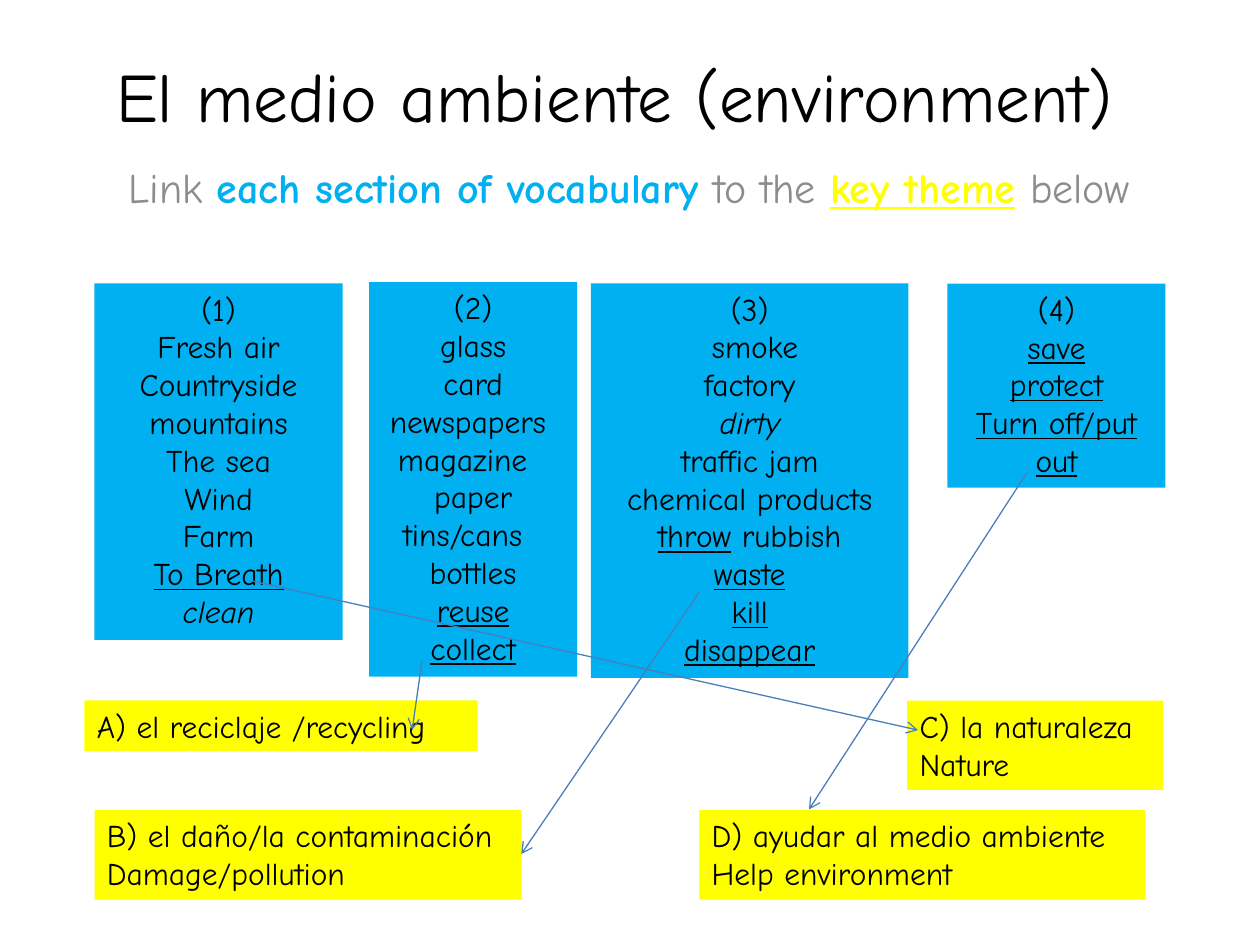
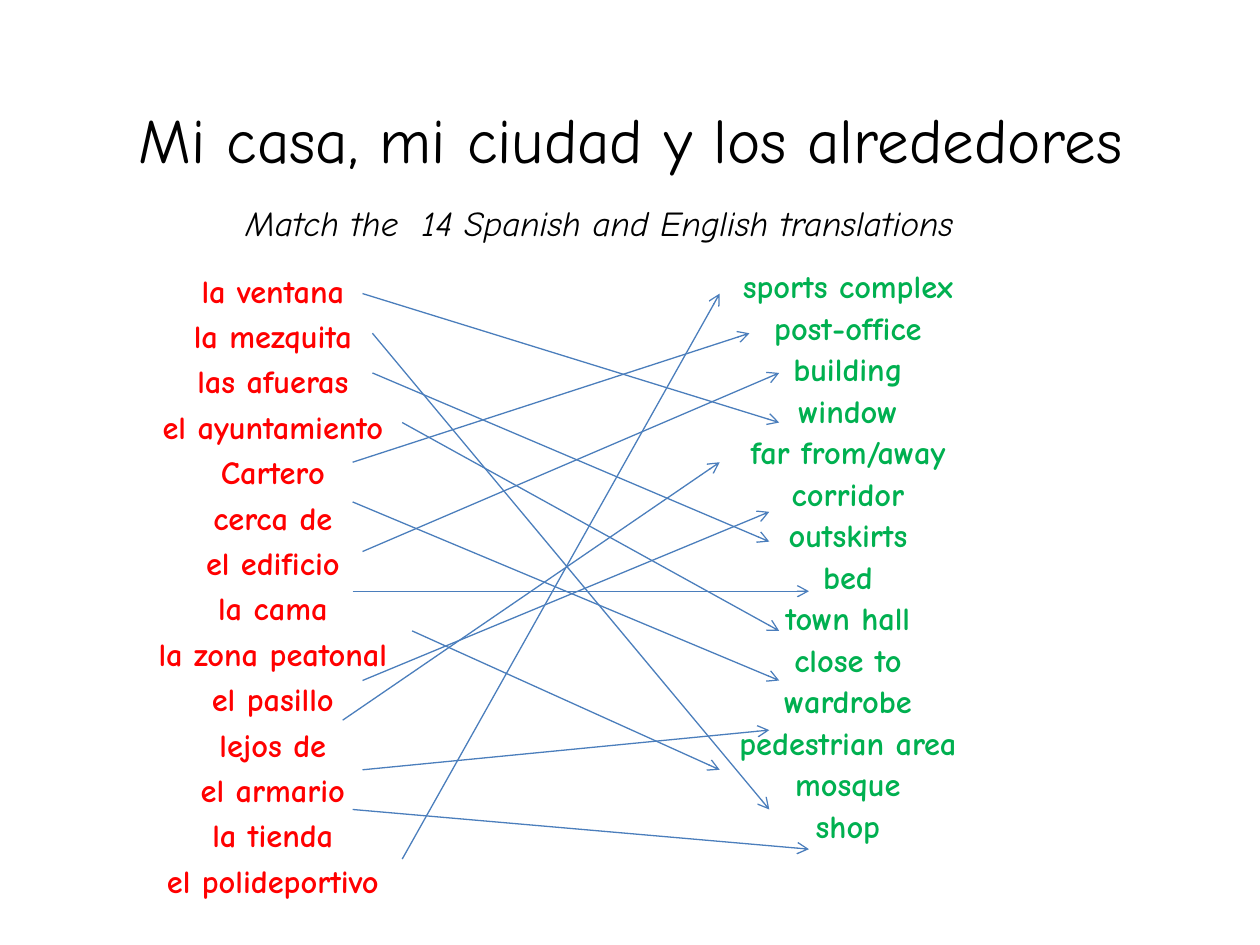
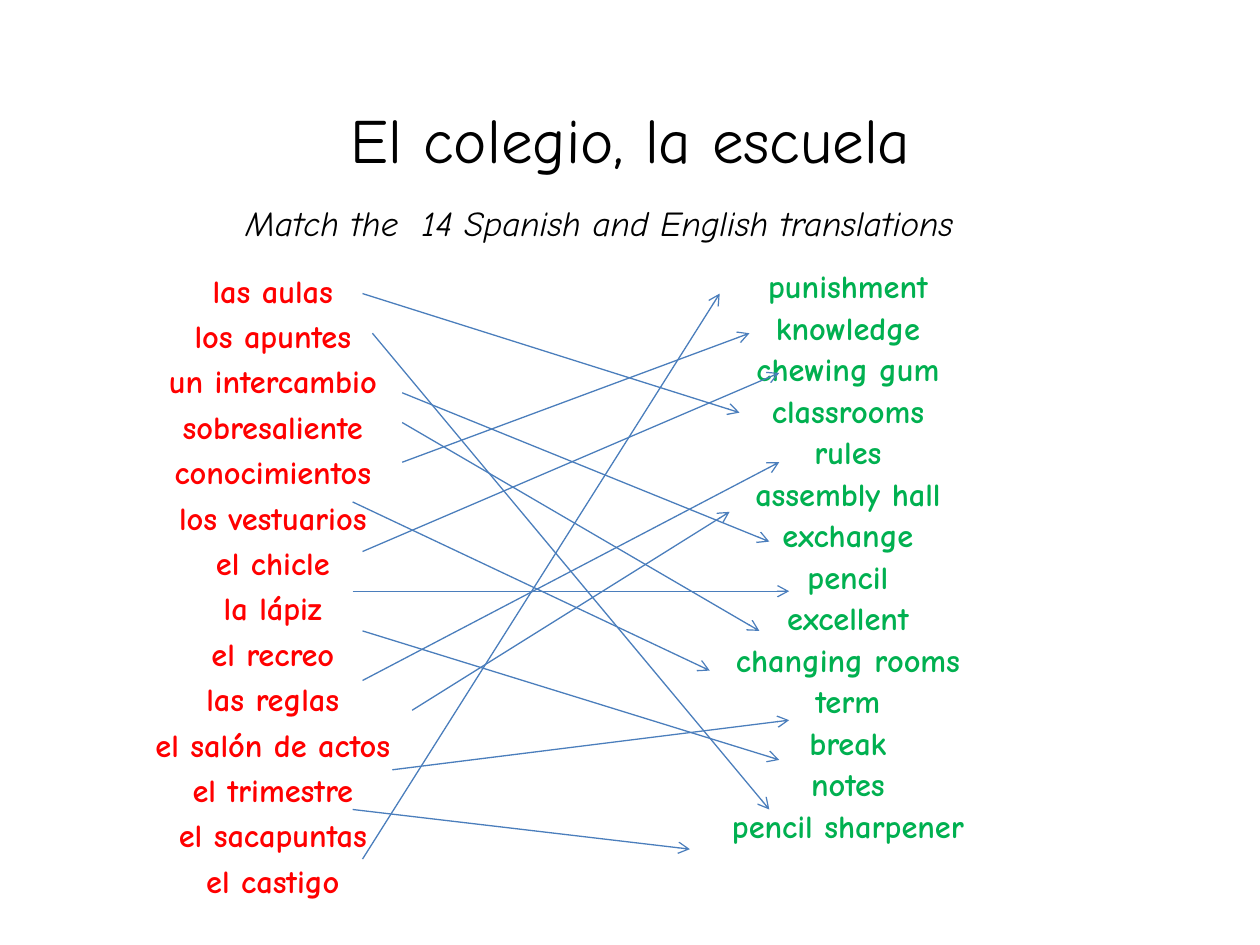
"""Build three Spanish vocabulary matching slides."""
from lxml import etree
from pptx import Presentation, util as u
from pptx.dml.color import RGBColor
from pptx.enum import shapes, text
from pptx.oxml.ns import qn

FONT = "Comic Neue"
BLACK, GREY, BLUE, YELLOW = "000000", "8C8C8C", "00B0F0", "FFFF00"
RED, GREEN, ARROW = "FF0000", "00B050", "4B7EBC"
WIDTH, HEIGHT = u.Inches(10), u.Inches(7.5)
COLUMN, ROW = WIDTH / 100, HEIGHT / 75
TICK = u.Mm(2)
ARROW_ORIGIN = (27.2, 23.3)
CENTER, LEFT = text.PP_ALIGN.CENTER, text.PP_ALIGN.LEFT
UNDERLINED, ITALIC = {"underline": True}, {"italic": True}

GROUPS = [
    ((7.5, 22.5, 19.7, 28.3), [
        "(1)", "Fresh air", "Countryside", "mountains", "The sea", "Wind", "Farm",
        [("To Breath", UNDERLINED)], [("clean", ITALIC)]]),
    ((29.3, 22.4, 16.5, 31.3), [
        "(2)", "glass", "card", "newspapers  magazine  ", "paper", "tins/cans  ", "bottles",
        [("reuse", UNDERLINED)], [("collect", UNDERLINED)]]),
    ((46.9, 22.5, 25.2, 31.3), [
        "(3)", " smoke", "factory", [("dirty", ITALIC)], "traffic jam", "chemical products",
        [("throw", UNDERLINED), (" rubbish", {})], [("waste", UNDERLINED)],
        [("kill", UNDERLINED)], [("disappear", UNDERLINED)]]),
    ((75.2, 22.5, 17.3, 16.2), [
        "(4)", [("save", UNDERLINED)], [("protect", UNDERLINED)],
        [("Turn off/put out", UNDERLINED)]]),
]
THEMES = [
    ((6.7, 55.6, 31.2, 4), ["A) el reciclaje /recycling"]),
    ((72, 55.6, 20.3, 7.1), ["C) la naturaleza", "Nature"]),
    ((7.5, 64.3, 33.9, 7.1), ["B) el daño/la contaminación", "Damage/pollution"]),
    ((55.5, 64.3, 35.4, 7.1), ["D) ayudar al medio ambiente", "Help environment"]),
]
THEME_ARROWS = [(-9, 29, 58, 44), (8, 37, 7, 44), (36, 30, 18, 56.5), (69, 18, 47, 52)]

TOWN = (
    "Mi casa, mi ciudad y los alrededores",
    ["la ventana", "la mezquita", "las afueras", "el ayuntamiento", "Cartero", "cerca de",
     "el edificio", "la cama", "la zona peatonal", "el pasillo", "lejos de", "el armario",
     "la tienda", "el polideportivo"],
    ["sports complex", "post-office", "building", "window", "far from/away", "corridor",
     "outskirts", "bed", "town hall", "close to", "wardrobe", "pedestrian area", "mosque",
     "shop"],
    [(2, 0, 44, 13), (3, 4, 43, 52), (3, 8, 43, 25), (6, 13, 44, 34), (1, 17, 41, 4),
     (1, 21, 44, 39), (2, 26, 44, 8), (1, 30, 47, 30), (7, 34, 38, 48), (2, 39, 43, 22),
     (0, 43, 38, 17), (2, 48, 43, 44), (1, 52, 47, 56), (6, 57, 38, 0)],
)
SCHOOL = (
    "El colegio, la escuela",
    ["las aulas", "los apuntes", "un intercambio", "sobresaliente", "conocimientos",
     "los vestuarios", "el chicle", "la lápiz", "el recreo", "las reglas",
     "el salón de actos", "el trimestre", "el sacapuntas", "el castigo"],
    ["punishment", "knowledge", "chewing gum", "classrooms", "rules", "assembly hall",
     "exchange", "pencil", "excellent", "changing rooms", "term", "break", "notes",
     "pencil sharpener"],
    [(2, 0, 40, 12), (3, 4, 43, 52), (6, 10, 43, 25), (6, 13, 42, 34), (6, 17, 41, 4),
     (1, 21, 37, 38), (2, 26, 44, 8), (1, 30, 45, 30), (2, 34, 44, 47), (7, 42, 39, 22),
     (2, 39, 44, 17), (5, 48, 45, 43), (1, 52, 35, 56), (2, 57, 38, 0)],
)


def color(value):
    """Turn a hex string into a colour."""
    return RGBColor.from_string(value)


def place(box):
    """Turn grid columns and rows into slide lengths."""
    left, top, width, height = box
    return [round(n) for n in (left * COLUMN, top * ROW, width * COLUMN, height * ROW)]


def write(shape, paragraphs, size, ink=BLACK, align=CENTER, bold=False, italic=False,
          before=0, spacing=1.0):
    """Write paragraphs, each a string or a list of spans with their own style."""
    frame = shape.text_frame
    frame.word_wrap = True
    for index, content in enumerate(paragraphs):
        para = frame.add_paragraph() if index else frame.paragraphs[0]
        para.alignment, para.line_spacing = align, spacing
        para.space_before = u.Pt(before)
        para.font.name, para.font.size = FONT, u.Pt(size)
        para.font.bold, para.font.italic = bold, italic
        para.font.color.rgb = color(ink)
        for words, style in [(content, {})] if isinstance(content, str) else content:
            span = para.add_run()
            span.text = words
            for name, value in style.items():
                if name == "ink":
                    span.font.color.rgb = color(value)
                else:
                    setattr(span.font, name, value)


def add_text(page, box, paragraphs, size, anchor=text.MSO_ANCHOR.TOP, **style):
    """Add a text box."""
    shape = page.shapes.add_textbox(*place(box))
    shape.text_frame.vertical_anchor = anchor
    write(shape, paragraphs, size, **style)


def add_card(page, box, paragraphs, fill, align):
    """Add a filled vocabulary card."""
    card = page.shapes.add_shape(shapes.MSO_SHAPE.RECTANGLE, *place(box))
    card.shadow.inherit = False
    card.fill.solid()
    card.fill.fore_color.rgb = color(fill)
    card.line.fill.background()
    card.text_frame.vertical_anchor = text.MSO_ANCHOR.TOP
    write(card, paragraphs, 18, align=align)


def add_arrows(page, arrows):
    """Draw arrows given in ticks from the arrow origin."""
    left, top = ARROW_ORIGIN[0] * COLUMN, ARROW_ORIGIN[1] * ROW
    for x1, y1, x2, y2 in arrows:
        ends = (left + x1 * TICK, top + y1 * TICK, left + x2 * TICK, top + y2 * TICK)
        arrow = page.shapes.add_connector(shapes.MSO_CONNECTOR.STRAIGHT, *map(round, ends))
        arrow.line.color.rgb = color(ARROW)
        arrow.line.width = u.Pt(0.75)
        etree.SubElement(arrow.line._get_or_add_ln(), qn("a:tailEnd"), type="arrow")
        etree.SubElement(arrow._element.spPr, qn("a:effectLst"))


def add_title(page, box, title, size):
    """Add a vertically centred title."""
    add_text(page, box, [title], size, anchor=text.MSO_ANCHOR.MIDDLE)


def build_themes(page):
    """Lay out word groups, key themes and the arrows joining them."""
    add_title(page, (3.5, 3.6, 90.5, 7.9), "El medio ambiente (environment)", 39.6)
    instruction = [
        ("Link ", {}), ("each section of vocabulary ", {"ink": BLUE, "bold": True}),
        ("to the ", {}), ("key theme", {"ink": YELLOW, "bold": True, "underline": True}),
        (" ", {"bold": True}), ("below", {})]
    add_text(page, (3.5, 12.3, 92.9, 7.1), [instruction], 24, ink=GREY, before=4.8)
    for box, words in GROUPS:
        add_card(page, box, words, BLUE, CENTER)
    for box, words in THEMES:
        add_card(page, box, words, YELLOW, LEFT)
    add_arrows(page, THEME_ARROWS)


def build_match(page, title, spanish, english, arrows):
    """Lay out two word lists and the arrows joining translations."""
    add_title(page, (2.8, 2.9, 94.5, 16.1), title, 36)
    add_text(page, (6.7, 21, 29.9, 49.6), spanish, 18.5, ink=RED, bold=True, before=3.7)
    add_text(page, (18.5, 15.5, 66.9, 4.4),
             ["Match the  14 Spanish and English translations"], 20, align=LEFT, italic=True)
    add_text(page, (55.5, 21, 23.6, 49.6), english, 18.5, ink=GREEN, bold=True,
             before=3.7, spacing=0.9)
    add_arrows(page, arrows)


def main():
    """Build and save the deck."""
    deck = Presentation()
    deck.slide_width, deck.slide_height = WIDTH, HEIGHT
    blank = deck.slide_layouts[6]
    build_themes(deck.slides.add_slide(blank))
    for topic in (TOWN, SCHOOL):
        build_match(deck.slides.add_slide(blank), *topic)
    deck.save("out.pptx")


if __name__ == "__main__":
    main()
